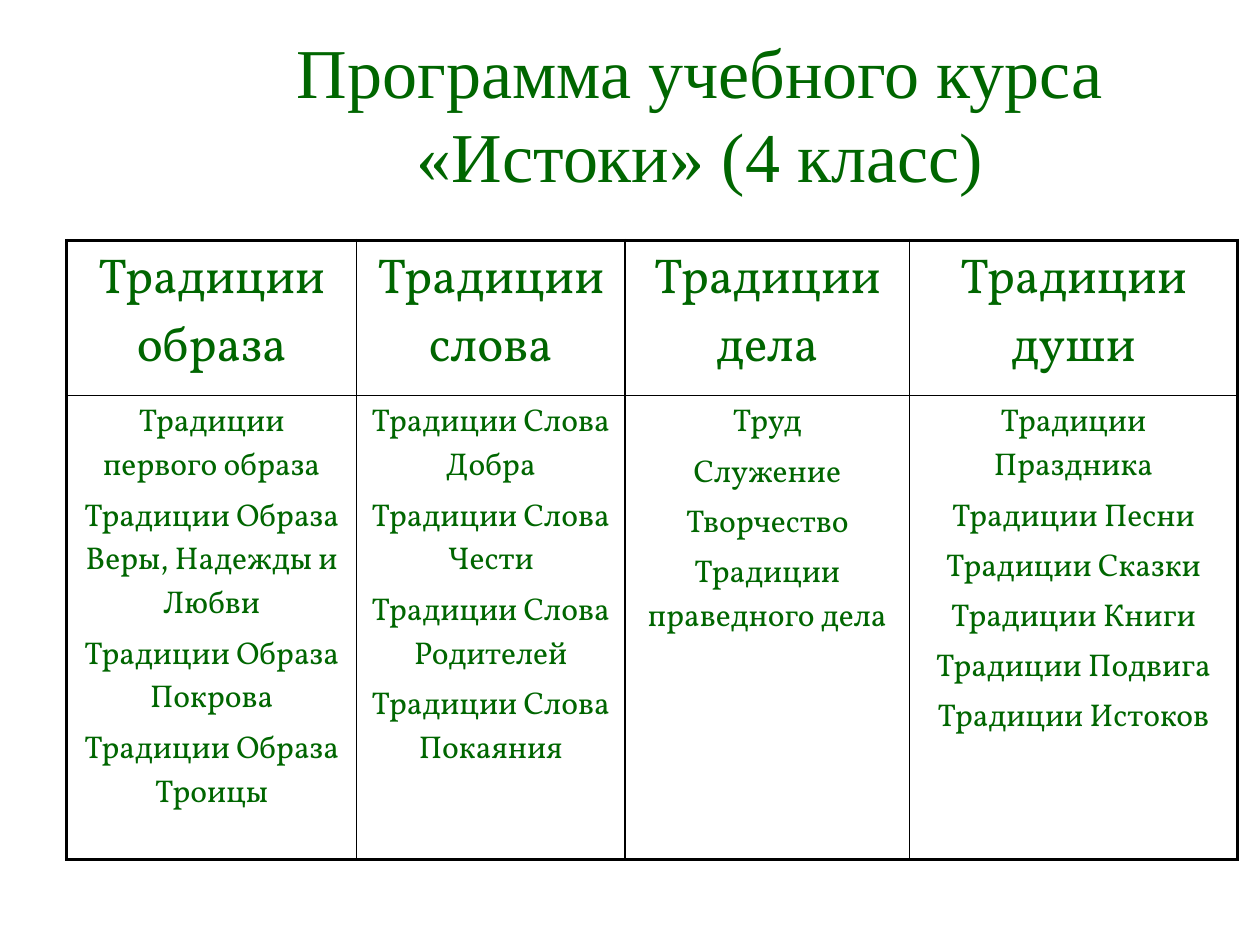
from pptx import Presentation
from pptx.dml.color import RGBColor
from pptx.enum.text import MSO_ANCHOR, PP_ALIGN
from pptx.oxml import parse_xml
from pptx.oxml.ns import nsdecls
from pptx.util import Inches, Pt

GREEN = "006600"
BLACK = "000000"
THICK, THIN = 2.25, 1
WIDTHS = [2.3, 2.13, 2.26, 2.6]
HEIGHTS = [1.23, 3.68]
SIZES = [28, 18]
ROWS = [
    [["Традиции образа"], ["Традиции слова"], ["Традиции дела"], ["Традиции души"]],
    [
        ["Традиции первого образа", "Традиции Образа Веры, Надежды и Любви",
         "Традиции Образа Покрова", "Традиции Образа Троицы"],
        ["Традиции Слова Добра", "Традиции Слова Чести",
         "Традиции Слова Родителей", "Традиции Слова Покаяния"],
        ["Труд", "Служение", "Творчество", "Традиции праведного дела"],
        ["Традиции Праздника", "Традиции Песни", "Традиции Сказки",
         "Традиции Книги", "Традиции Подвига", "Традиции Истоков"],
    ],
]


def tint(code):
    """Turn a hex string into a colour."""
    return RGBColor.from_string(code)


def write(frame, lines, face, size):
    """Fill a text frame with centred paragraphs."""
    for i, line in enumerate(lines):
        para = frame.add_paragraph() if i else frame.paragraphs[0]
        para.text = line
        para.alignment = PP_ALIGN.CENTER
        if i:
            para.space_before = Pt(size * 0.2)
        para.font.name = face
        para.font.size = Pt(size)
        para.font.color.rgb = tint(GREEN)


def edge(cell, side, width):
    """Draw one border of a cell."""
    cell._tc.get_or_add_tcPr().append(parse_xml(
        f'<a:ln{side} {nsdecls("a")} w="{Pt(width)}"><a:solidFill>'
        f'<a:srgbClr val="{BLACK}"/></a:solidFill></a:ln{side}>'))


def add_title(slide):
    """Place and format the title."""
    title = slide.shapes.title
    title.left, title.top = Inches(1.42), Inches(0.32)
    title.width, title.height = Inches(8.27), Inches(1.15)
    title.text_frame.vertical_anchor = MSO_ANCHOR.MIDDLE
    write(title.text_frame, ["Программа учебного курса «Истоки» (4 класс)"],
          "Times New Roman", 40)


def add_grid(slide):
    """Add the table with a thick frame and thin inner lines."""
    rows, cols = len(HEIGHTS), len(WIDTHS)
    grid = slide.shapes.add_table(
        rows, cols, Inches(0.53), Inches(1.91),
        Inches(sum(WIDTHS)), Inches(sum(HEIGHTS))).table
    grid.first_row = grid.horz_banding = False
    for col, width in zip(grid.columns, WIDTHS):
        col.width = Inches(width)
    for r, row in enumerate(ROWS):
        grid.rows[r].height = Inches(HEIGHTS[r])
        for c, lines in enumerate(row):
            cell = grid.cell(r, c)
            outer = {"L": c == 0, "R": c == cols - 1,
                     "T": r == 0, "B": r == rows - 1}
            for side, thick in outer.items():
                edge(cell, side, THICK if thick else THIN)
            cell.fill.background()
            write(cell.text_frame, lines, "Vollkorn", SIZES[r])


def main():
    """Build and save the slide."""
    deck = Presentation()
    deck.slide_width, deck.slide_height = Inches(10), Inches(7.5)
    slide = deck.slides.add_slide(deck.slide_layouts[5])
    add_title(slide)
    add_grid(slide)
    deck.save("out.pptx")


if __name__ == "__main__":
    main()
